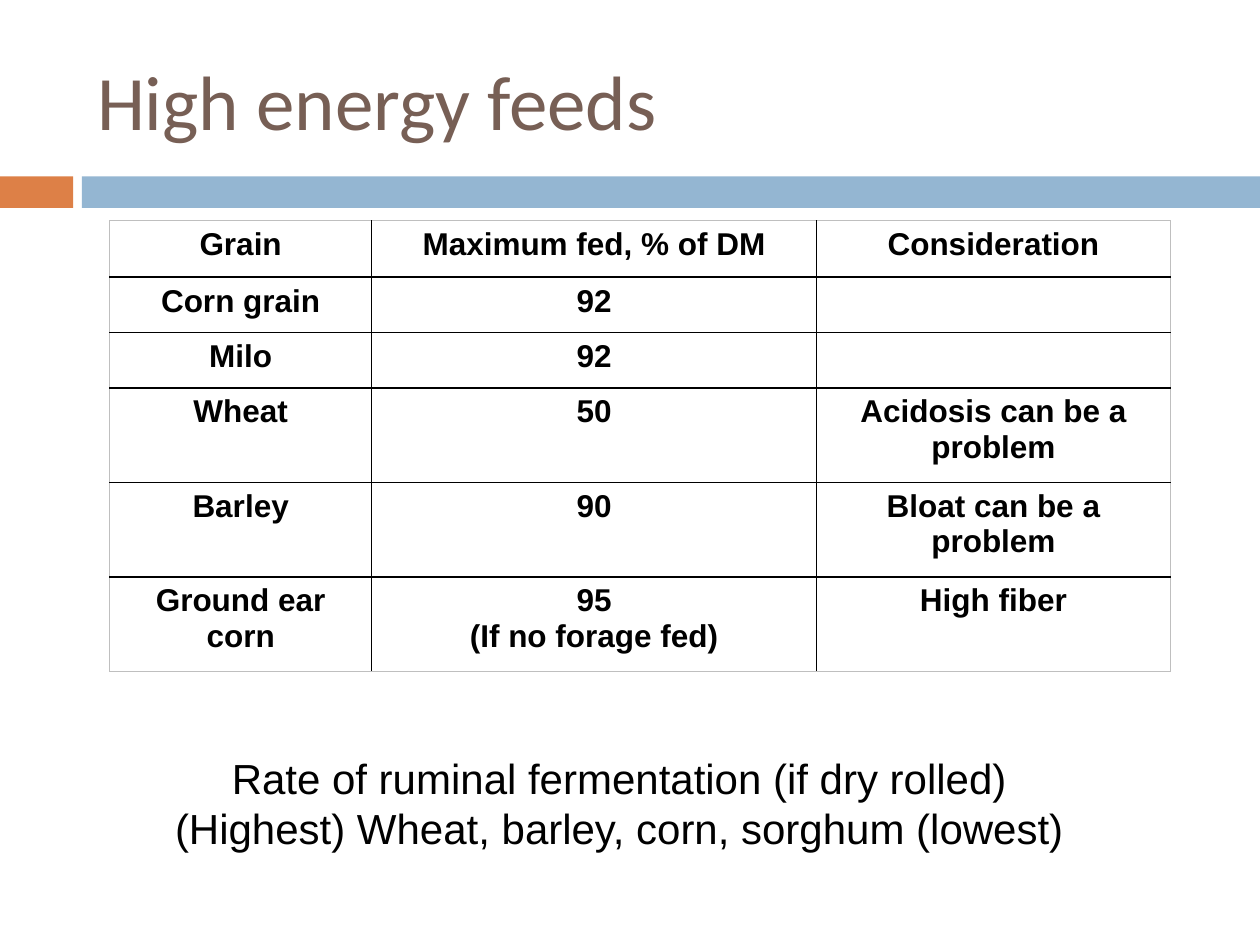
"""Build a slide on high energy feeds with a grain table and a fermentation note."""
import pptx
import pptx.dml.color
import pptx.enum.shapes
import pptx.enum.text
import pptx.oxml
import pptx.oxml.ns
import pptx.util
from pptx.util import Inches

ORANGE = pptx.dml.color.RGBColor(0xDD, 0x80, 0x47)
BLUE = pptx.dml.color.RGBColor(0x94, 0xB6, 0xD2)
BROWN = pptx.dml.color.RGBColor(0x77, 0x5F, 0x55)
BLACK = pptx.dml.color.RGBColor(0, 0, 0)
GREY = pptx.dml.color.RGBColor(0xBF, 0xBF, 0xBF)

COLUMN_WIDTHS = [2.08, 3.53, 2.81]
ROW_HEIGHTS = [0.45, 0.44, 0.44, 0.75, 0.75, 0.75]
FEEDS = [
    ["Grain", "Maximum fed, % of DM", "Consideration"],
    ["Corn grain", "92", ""],
    ["Milo", "92", ""],
    ["Wheat", "50", "Acidosis can be a problem"],
    ["Barley", "90", "Bloat can be a problem"],
    ["Ground ear corn", "95\n(If no forage fed)", "High fiber"],
]


class FeedSlide:
    def __init__(self, deck):
        self.slide = deck.slides.add_slide(deck.slide_layouts[5])
        self.body_font = "Arial"
        self.title_font = "Calibri"

    def format_text(self, frame, font, size, color, align, bold=False):
        for para in frame.paragraphs:
            para.alignment = align
            for span in para.runs:
                span.font.name = font
                span.font.size = pptx.util.Pt(size)
                span.font.bold = bold
                span.font.color.rgb = color

    def bar(self, left, width, color):
        shape = self.slide.shapes.add_shape(
            pptx.enum.shapes.MSO_SHAPE.RECTANGLE,
            Inches(left), Inches(1.4), Inches(width), Inches(0.25))
        shape.shadow.inherit = False
        shape.fill.solid()
        shape.fill.fore_color.rgb = color
        shape.line.fill.background()

    def title(self, text, left, top, width, height):
        box = self.slide.shapes.title
        box.left, box.top = Inches(left), Inches(top)
        box.width, box.height = Inches(width), Inches(height)
        frame = box.text_frame
        frame.text = text
        frame.vertical_anchor = pptx.enum.text.MSO_ANCHOR.MIDDLE
        self.format_text(frame, self.title_font, 44, BROWN, pptx.enum.text.PP_ALIGN.LEFT)

    def border(self, cell, side, color, points):
        cell._tc.get_or_add_tcPr().append(pptx.oxml.parse_xml(
            f'<a:ln{side} {pptx.oxml.ns.nsdecls("a")} w="{pptx.util.Pt(points)}">'
            f'<a:solidFill><a:srgbClr val="{color}"/></a:solidFill></a:ln{side}>'))

    def table(self, rows, left, top, widths, heights):
        table = self.slide.shapes.add_table(
            len(rows), len(widths), Inches(left), Inches(top),
            Inches(sum(widths)), Inches(sum(heights))).table
        table.first_row = table.horz_banding = False
        for column, width in zip(table.columns, widths):
            column.width = Inches(width)
        for row, height in zip(table.rows, heights):
            row.height = Inches(height)
        for i, row in enumerate(rows):
            for j, text in enumerate(row):
                cell = table.cell(i, j)
                cell.text_frame.text = text
                self.format_text(cell.text_frame, self.body_font, 18, BLACK,
                                 pptx.enum.text.PP_ALIGN.CENTER, bold=True)
                outer = {"L": j == 0, "R": j == len(widths) - 1,
                         "T": i == 0, "B": i == len(rows) - 1}
                for side, at_edge in outer.items():
                    color, points = (GREY, 0.5) if at_edge else (BLACK, 1)
                    self.border(cell, side, color, points)
                cell.fill.background()

    def note(self, text, left, top, width, height):
        box = self.slide.shapes.add_textbox(
            Inches(left), Inches(top), Inches(width), Inches(height))
        frame = box.text_frame
        frame.word_wrap = True
        frame.auto_size = pptx.enum.text.MSO_AUTO_SIZE.SHAPE_TO_FIT_TEXT
        frame.text = text
        self.format_text(frame, self.body_font, 24, BLACK, pptx.enum.text.PP_ALIGN.CENTER)


def main():
    deck = pptx.Presentation()
    deck.slide_width, deck.slide_height = Inches(10), Inches(7.5)
    page = FeedSlide(deck)
    page.bar(0, 0.58, ORANGE)
    page.bar(0.65, 9.35, BLUE)
    page.title("High energy feeds", 0.67, 0.25, 8.92, 1.08)
    page.table(FEEDS, 0.87, 1.75, COLUMN_WIDTHS, ROW_HEIGHTS)
    page.note("Rate of ruminal fermentation (if dry rolled)\n"
              "(Highest) Wheat, barley, corn, sorghum (lowest)", 0.83, 5.92, 8.17, 0.91)
    deck.save("out.pptx")


if __name__ == "__main__":
    main()
